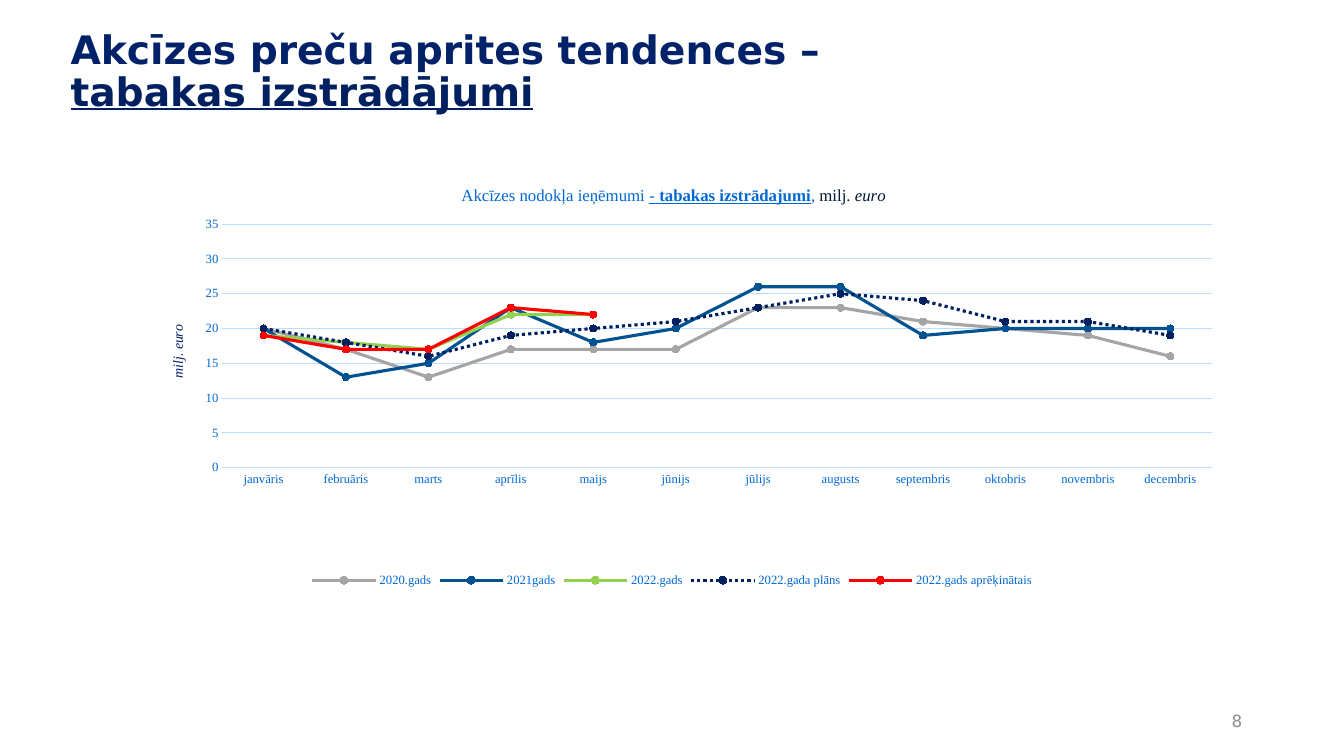
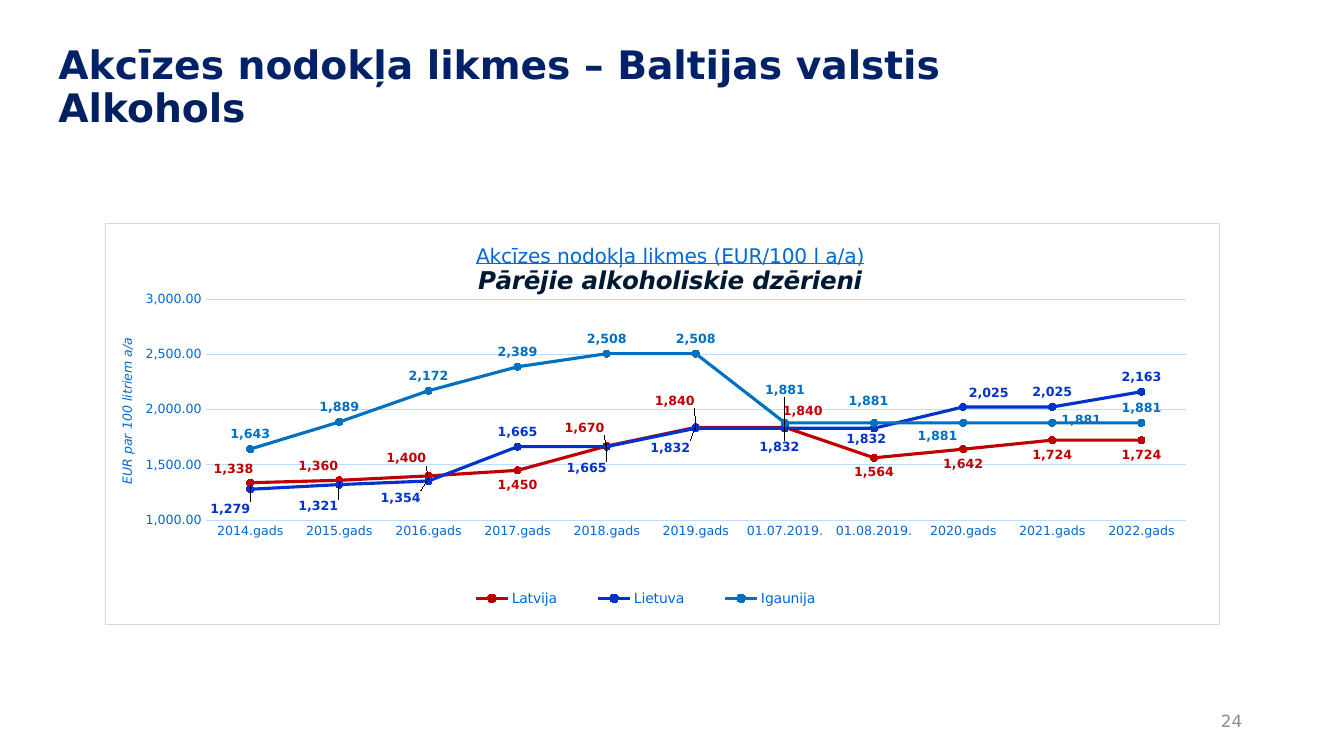
"""Build two slides on excise duty trends and rates, each with a line chart."""
from dataclasses import dataclass

from pptx import Presentation
from pptx.chart.data import CategoryChartData
from pptx.dml.color import RGBColor
from pptx.enum.chart import XL_CHART_TYPE as Kind, XL_LABEL_POSITION as Pos
from pptx.enum.chart import XL_LEGEND_POSITION as LegendPos, XL_MARKER_STYLE as Marker
from pptx.enum.chart import XL_TICK_MARK as Tick
from pptx.enum.dml import MSO_LINE as Dash
from pptx.enum.text import MSO_ANCHOR as Anchor, MSO_AUTO_SIZE as Fit, PP_ALIGN as Align
from pptx.oxml import parse_xml
from pptx.oxml.ns import nsdecls
from pptx.util import Inches, Pt


@dataclass(frozen=True)
class Theme:
    """Colours, fonts and type sizes shared by both slides."""
    title: str = "012269"
    navy: str = "002060"
    text: str = "001933"
    accent: str = "0068D4"
    grid: str = "BADCFF"
    border: str = "D9D9D9"
    muted: str = "8C8C90"
    sans: str = "DejaVu Sans"
    serif: str = "Times New Roman"
    title_size: float = 28
    number_size: float = 12
    chart_size: float = 10
    tick_size: float = 9
    line: float = 2.25
    hairline: float = 0.75
    marker: int = 5


T = Theme()
WIDTH, HEIGHT = 13.33, 7.5
NUMBER_BOX = (9.42, 6.95, 3, 0.4)

SLIDES = [
    dict(
        title=["Akcīzes preču aprites tendences –", "tabakas izstrādājumi"],
        underline=True, title_box=(0.6, 0, 11.81, 1.45), number="8",
        chart=dict(
            box=(1.09, 1.63, 11.15, 4.24), font=T.serif, border=None,
            plot=(0.1, 0.14, 0.88, 0.57), title_at=(0.31, 0.04),
            title=[[("Akcīzes nodokļa ieņēmumi ", 12, T.accent, ""),
                    ("- ", 12, T.accent, "u"),
                    ("tabakas izstrādajumi", 12, T.accent, "bu"),
                    (", ", 12, T.accent, ""),
                    ("milj. ", 12, T.text, ""),
                    ("euro", 12, T.text, "i")]],
            axis_title=("milj. euro", 10, T.navy, "i"), axis_at=(0.05, 0.37),
            scale=(0, 35, 5), axis_format="#,##0", legend_size=9, legend=None,
            cats=["janvāris", "februāris", "marts", "aprīlis", "maijs", "jūnijs", "jūlijs",
                  "augusts", "septembris", "oktobris", "novembris", "decembris"],
            series=[
                dict(name="2020.gads", color="A5A5A5",
                     vals=[20, 17, 13, 17, 17, 17, 23, 23, 21, 20, 19, 16]),
                dict(name="2021gads", color="005390",
                     vals=[20, 13, 15, 23, 18, 20, 26, 26, 19, 20, 20, 20]),
                dict(name="2022.gads", color="92D050", vals=[19, 18, 17, 22, 22]),
                dict(name="2022.gada plāns", color=T.navy, dash=Dash.ROUND_DOT,
                     vals=[20, 18, 16, 19, 20, 21, 23, 25, 24, 21, 21, 19]),
                dict(name="2022.gads aprēķinātais", color="FF0000",
                     vals=[19, 17, 17, 23, 22]),
            ])),
    dict(
        title=["Akcīzes nodokļa likmes – Baltijas valstis", "Alkohols"],
        underline=False, title_box=(0.48, 0.15, 11.5, 1.45), number="24",
        chart=dict(
            box=(1.04, 2.21, 11.06, 3.99), font=T.sans, border=T.border,
            plot=(0.09, 0.19, 0.88, 0.55), title_at=(0.33, 0.04),
            title=[[("Akcīzes nodokļa likmes (EUR/100 l a/a)", 14.4, T.accent, "u")],
                   [("Pārējie alkoholiskie dzērieni", 17.6, T.text, "bi")]],
            axis_title=("EUR par 100 litriem a/a", 9, T.accent, "i"), axis_at=(0.01, 0.28),
            scale=(1000, 3000, 500), axis_format="#,##0.00", legend_size=10,
            legend=(0.3, 0.9, 0.37, 0.07),
            cats=["2014.gads", "2015.gads", "2016.gads", "2017.gads", "2018.gads", "2019.gads",
                  "01.07.2019.", "01.08.2019.", "2020.gads", "2021.gads", "2022.gads"],
            series=[
                dict(name="Latvija", color="C00000", labels=Pos.BELOW,
                     vals=[1338, 1360, 1400, 1450, 1670, 1840, 1840, 1564, 1642, 1724, 1724],
                     shifts={0: (-1.5, -7), 1: (-1.9, -7.2), 2: (-2, -8), 4: (-2, -8.2),
                             5: (-1.9, -10.2), 6: (1.6, -7.7)}),
                dict(name="Lietuva", color="0033CC", labels=Pos.ABOVE,
                     vals=[1279, 1321, 1354, 1665, 1665, 1832, 1832, 1832, 2025, 2025, 2163],
                     shifts={0: (-1.8, 8.7), 1: (-1.9, 9.2), 2: (-2.5, 8), 4: (-1.8, 9.2),
                             5: (-2.3, 8.7), 6: (-0.5, 8.5), 7: (-0.7, 6.5), 8: (2.3, 0.2)}),
                dict(name="Igaunija", color="0070C0", labels=Pos.ABOVE,
                     vals=[1643, 1889, 2172, 2389, 2508, 2508, 1881, 1881, 1881, 1881, 1881],
                     shifts={6: (0, -4.5), 7: (-0.5, -1.7), 8: (-2.3, 7), 9: (2.6, 3)}),
            ])),
]


def rgb(value):
    """Turn a hex string into a colour."""
    return RGBColor.from_string(value)


def style(font, name, size, color, marks=""):
    """Format a font; marks holds b, i and u flags."""
    font.name, font.size, font.color.rgb = name, Pt(size), rgb(color)
    font.bold, font.italic, font.underline = ("b" in marks, "i" in marks, "u" in marks)


def rule(line, color, width):
    """Give a line its colour and width."""
    line.color.rgb, line.width = rgb(color), Pt(width)


def add_rich(tf, paragraphs, font):
    """Fill a text frame with formatted runs."""
    for i, runs in enumerate(paragraphs):
        p = tf.add_paragraph() if i else tf.paragraphs[0]
        p.alignment = Align.CENTER
        for text, size, color, marks in runs:
            r = p.add_run()
            r.text = text
            style(r.font, font, size, color, marks)


def place(parent, after, x, y, w=None, h=None, mode="edge", inner=False):
    """Set the manual layout of a chart part as shares of the chart."""
    for old in parent.xpath("./c:layout"):
        parent.remove(old)
    fields = [("layoutTarget", "inner")] if inner else []
    if mode:
        fields += [("xMode", mode), ("yMode", mode)]
    fields += [("x", x), ("y", y)]
    if w:
        fields += [("w", w), ("h", h)]
    body = "".join(f'<c:{tag} val="{val}"/>' for tag, val in fields)
    layout = parse_xml(f'<c:layout {nsdecls("c")}><c:manualLayout>{body}'
                       '</c:manualLayout></c:layout>')
    if after:
        parent.xpath(f"./c:{after}")[0].addnext(layout)
    else:
        parent.insert(0, layout)


def frame(root, color):
    """Outline the chart area, or leave it bare."""
    paint = f'<a:solidFill><a:srgbClr val="{color}"/></a:solidFill>' if color else "<a:noFill/>"
    root.xpath("./c:chart")[0].addnext(parse_xml(
        f'<c:spPr {nsdecls("c", "a")}><a:noFill/><a:ln w="{Pt(T.hairline)}">{paint}'
        '</a:ln></c:spPr>'))


def format_axes(chart, c):
    """Style both axes and the value axis title."""
    cat, val = chart.category_axis, chart.value_axis
    for axis in (cat, val):
        axis.major_tick_mark = axis.minor_tick_mark = Tick.NONE
        style(axis.tick_labels.font, c["font"], T.tick_size, T.accent)
    rule(cat.format.line, T.grid, T.hairline)
    val.format.line.fill.background()
    val.minimum_scale, val.maximum_scale, val.major_unit = c["scale"]
    val.has_major_gridlines = True
    rule(val.major_gridlines.format.line, T.grid, T.hairline)
    val.tick_labels.number_format = c["axis_format"]
    val.tick_labels.number_format_is_linked = False
    add_rich(val.axis_title.text_frame, [[c["axis_title"]]], c["font"])


def format_series(s, root, data, font):
    """Style one series, its markers and its labels."""
    s.smooth = False
    rule(s.format.line, data["color"], T.line)
    if "dash" in data:
        s.format.line.dash_style = data["dash"]
    s.marker.style, s.marker.size = Marker.CIRCLE, T.marker
    s.marker.format.fill.solid()
    s.marker.format.fill.fore_color.rgb = rgb(data["color"])
    rule(s.marker.format.line, data["color"], T.hairline)
    if "labels" not in data:
        return
    labels = s.data_labels
    labels.show_value, labels.position = True, data["labels"]
    labels.number_format, labels.number_format_is_linked = "#,##0", False
    style(labels.font, font, T.tick_size, data["color"], "b")
    for i, (dx, dy) in data["shifts"].items():
        label = s.points[i].data_label
        style(label.font, font, T.tick_size, data["color"], "b")
        label.position = data["labels"]
        item = root.xpath(f'.//c:dLbl[c:idx/@val="{i}"]')[0]
        place(item, "idx", round(dx / 100, 3), round(dy / 100, 3), mode=None)


def add_line_chart(slide, c):
    """Add a line chart with title, axes and legend."""
    cd = CategoryChartData(number_format="#,##0")
    cd.categories = c["cats"]
    for data in c["series"]:
        gap = len(c["cats"]) - len(data["vals"])
        cd.add_series(data["name"], data["vals"] + [None] * gap)
    chart = slide.shapes.add_chart(Kind.LINE_MARKERS, *map(Inches, c["box"]), cd).chart
    root = chart.element
    style(chart.font, c["font"], T.chart_size, T.text)
    frame(root, c["border"])
    chart.plots[0].vary_by_categories = False
    add_rich(chart.chart_title.text_frame, c["title"], c["font"])
    format_axes(chart, c)
    for s, ser, data in zip(chart.plots[0].series, root.xpath(".//c:ser"), c["series"]):
        format_series(s, ser, data, c["font"])
    chart.has_legend = True
    chart.legend.position, chart.legend.include_in_layout = LegendPos.BOTTOM, False
    style(chart.legend.font, c["font"], c["legend_size"], T.accent)
    place(root.xpath("./c:chart/c:title")[0], "tx", *c["title_at"])
    place(root.xpath(".//c:valAx/c:title")[0], "tx", *c["axis_at"])
    place(root.xpath(".//c:plotArea")[0], None, *c["plot"], inner=True)
    if c["legend"]:
        place(root.xpath(".//c:legend")[0], "legendPos", *c["legend"])


def add_title(slide, content):
    """Move and format the title placeholder."""
    sp = slide.shapes.title
    sp.left, sp.top, sp.width, sp.height = map(Inches, content["title_box"])
    tf = sp.text_frame
    tf.text = "\v".join(content["title"])
    tf.word_wrap, tf.auto_size, tf.vertical_anchor = True, Fit.NONE, Anchor.MIDDLE
    p = tf.paragraphs[0]
    p.alignment, p.line_spacing = Align.LEFT, 0.9
    first, second = p.runs
    style(first.font, T.sans, T.title_size, T.title, "b")
    style(second.font, T.sans, T.title_size, T.navy, "bu" if content["underline"] else "b")


def add_number(slide, number):
    """Write the page number at the lower right."""
    tf = slide.shapes.add_textbox(*map(Inches, NUMBER_BOX)).text_frame
    tf.text = number
    tf.word_wrap, tf.vertical_anchor = True, Anchor.MIDDLE
    p = tf.paragraphs[0]
    p.alignment = Align.RIGHT
    style(p.runs[0].font, T.sans, T.number_size, T.muted)


def main():
    """Build and save the presentation."""
    prs = Presentation()
    prs.slide_width, prs.slide_height = Inches(WIDTH), Inches(HEIGHT)
    for content in SLIDES:
        slide = prs.slides.add_slide(prs.slide_layouts[5])
        add_title(slide, content)
        add_number(slide, content["number"])
        add_line_chart(slide, content["chart"])
    prs.save("out.pptx")


if __name__ == "__main__":
    main()
